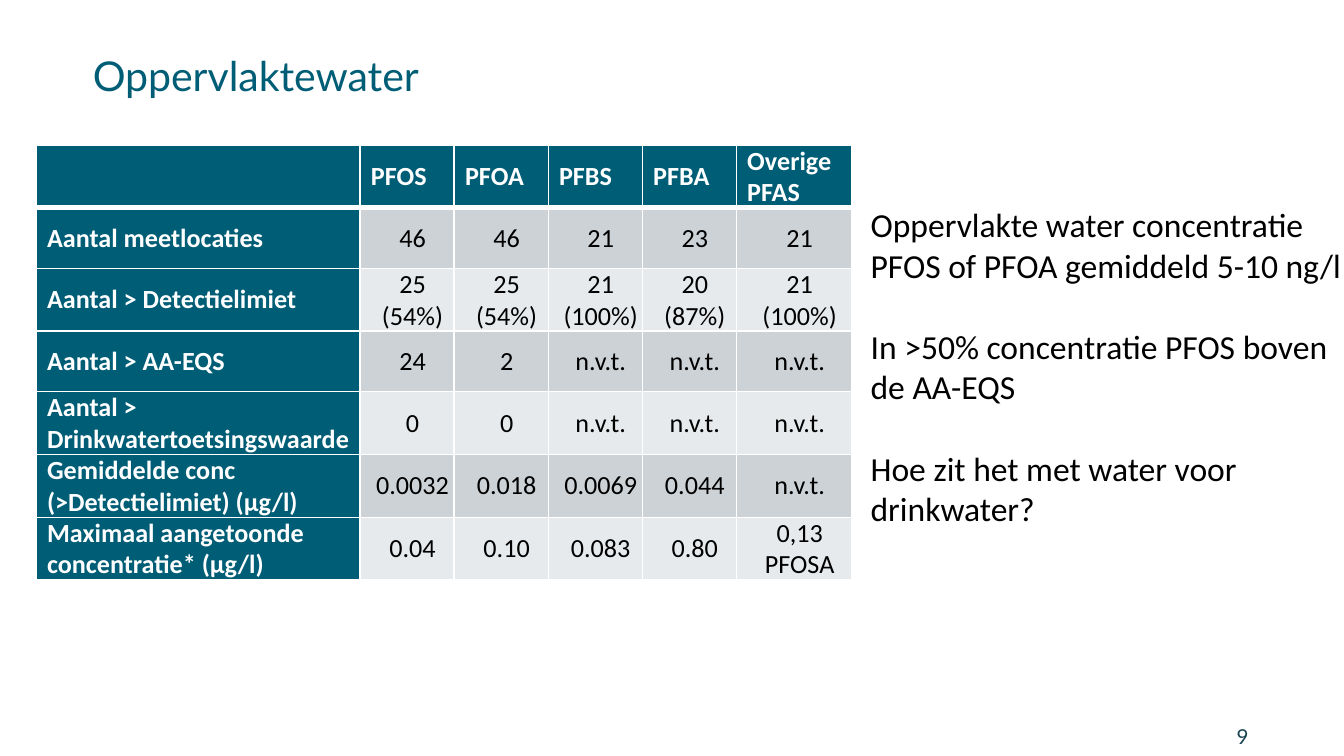
import pptx
import pptx.dml.color
import pptx.enum.text
import pptx.oxml.ns
import pptx.util
from lxml import etree
from pptx.util import Inches, Pt

TEAL, WHITE, BLACK = "005D76", "FFFFFF", "000000"
BANDS = ["CCD2D6", "E7EAEC"]
PP_ALIGN = pptx.enum.text.PP_ALIGN
MIDDLE = pptx.enum.text.MSO_ANCHOR.MIDDLE

TITLE = "Oppervlaktewater"
PAGE = "9"
HEADER = ["", "PFOS", "PFOA", "PFBS", "PFBA", "Overige PFAS"]
ROWS = [
    ["Aantal meetlocaties", "46", "46", "21", "23", "21"],
    ["Aantal > Detectielimiet", "25 (54%)", "25 (54%)", "21 (100%)", "20 (87%)", "21 (100%)"],
    ["Aantal > AA-EQS", "24", "2", "n.v.t.", "n.v.t.", "n.v.t."],
    ["Aantal > Drinkwatertoetsingswaarde", "0", "0", "n.v.t.", "n.v.t.", "n.v.t."],
    ["Gemiddelde conc (>Detectielimiet) (µg/l)", "0.0032", "0.018", "0.0069", "0.044", "n.v.t."],
    ["Maximaal aangetoonde concentratie* (µg/l)", "0.04", "0.10", "0.083", "0.80", "0,13 PFOSA"],
]
COL_WIDTHS = [2.41, 0.7, 0.7, 0.7, 0.7, 0.86]
ROW_HEIGHTS = [0.43] + [0.45] * len(ROWS)
# Each group of lines is set apart from the one before it
REMARKS = [
    ["Oppervlakte water concentratie", "PFOS of PFOA gemiddeld 5-10 ng/l"],
    ["In >50% concentratie PFOS boven", "de AA-EQS"],
    ["Hoe zit het met water voor drinkwater?"],
]


def rgb(color):
    return pptx.dml.color.RGBColor.from_string(color)


def style(p, font, size, color, bold=False, align=PP_ALIGN.LEFT):
    p.alignment = align
    p.font.name, p.font.size, p.font.bold = font, Pt(size), bold
    p.font.color.rgb = rgb(color)


def add_text_frame(slide, left, top, width, height, margin=None):
    sp = slide.shapes.add_textbox(Inches(left), Inches(top), Inches(width), Inches(height))
    tf = sp.text_frame
    tf.word_wrap = True
    if margin is not None:
        tf.margin_left = tf.margin_top = tf.margin_right = tf.margin_bottom = Inches(margin)
    return tf


def add_borders(cell, widths):
    """Draw white cell borders; widths maps a side (L, R, T, B) to points."""
    tc_pr = cell._tc.get_or_add_tcPr()
    qn = pptx.oxml.ns.qn
    for side, width in widths.items():
        ln = etree.SubElement(tc_pr, qn(f"a:ln{side}"), w=str(Pt(width)))
        fill = etree.SubElement(ln, qn("a:solidFill"))
        etree.SubElement(fill, qn("a:srgbClr"), val=WHITE)


def add_results_table(slide):
    frame = slide.shapes.add_table(
        len(ROW_HEIGHTS), len(COL_WIDTHS), Inches(0.27), Inches(1.08),
        Inches(sum(COL_WIDTHS)), Inches(sum(ROW_HEIGHTS)))
    table = frame.table
    for column, width in zip(table.columns, COL_WIDTHS):
        column.width = Inches(width)
    for row, height in zip(table.rows, ROW_HEIGHTS):
        row.height = Inches(height)

    for i, texts in enumerate([HEADER] + ROWS):
        for j, text in enumerate(texts):
            cell = table.cell(i, j)
            heading = i == 0 or j == 0
            add_borders(cell, {"L": 1, "R": 1, "T": 3 if i == 1 else 1, "B": 3 if i == 0 else 1})
            cell.fill.solid()
            cell.fill.fore_color.rgb = rgb(TEAL if heading else BANDS[(i - 1) % 2])
            cell.margin_left = Inches(0.08)
            cell.margin_top = cell.margin_right = cell.margin_bottom = 0
            cell.vertical_anchor = MIDDLE
            cell.text = text
            style(cell.text_frame.paragraphs[0], "Calibri", 14, WHITE if heading else BLACK,
                  heading, PP_ALIGN.LEFT if heading else PP_ALIGN.CENTER)


def add_remarks(slide):
    tf = add_text_frame(slide, 6.38, 1.47, 4.07, 2.83)
    for g, lines in enumerate(REMARKS):
        for n, line in enumerate(lines):
            p = tf.add_paragraph() if g or n else tf.paragraphs[0]
            p.text = line
            style(p, "Calibri", 18, BLACK)
            if g and n == 0:
                p.space_before = Pt(22)


def main():
    prs = pptx.Presentation()
    prs.slide_width, prs.slide_height = Inches(10), Inches(10 * 9 / 16)
    slide = prs.slides.add_slide(prs.slide_layouts[6])

    tf = add_text_frame(slide, 0.69, 0.44, 8.59, 0.47, margin=0)
    tf.text = TITLE
    style(tf.paragraphs[0], "Lato", 22, TEAL)
    tf.paragraphs[0].line_spacing = Pt(22)

    tf = add_text_frame(slide, 8.71, 5.33, 0.58, 0.29, margin=0)
    tf.vertical_anchor = MIDDLE
    tf.text = PAGE
    style(tf.paragraphs[0], "Lato", 11, "184350", align=PP_ALIGN.RIGHT)

    add_remarks(slide)
    add_results_table(slide)
    prs.save("out.pptx")


if __name__ == "__main__":
    main()
